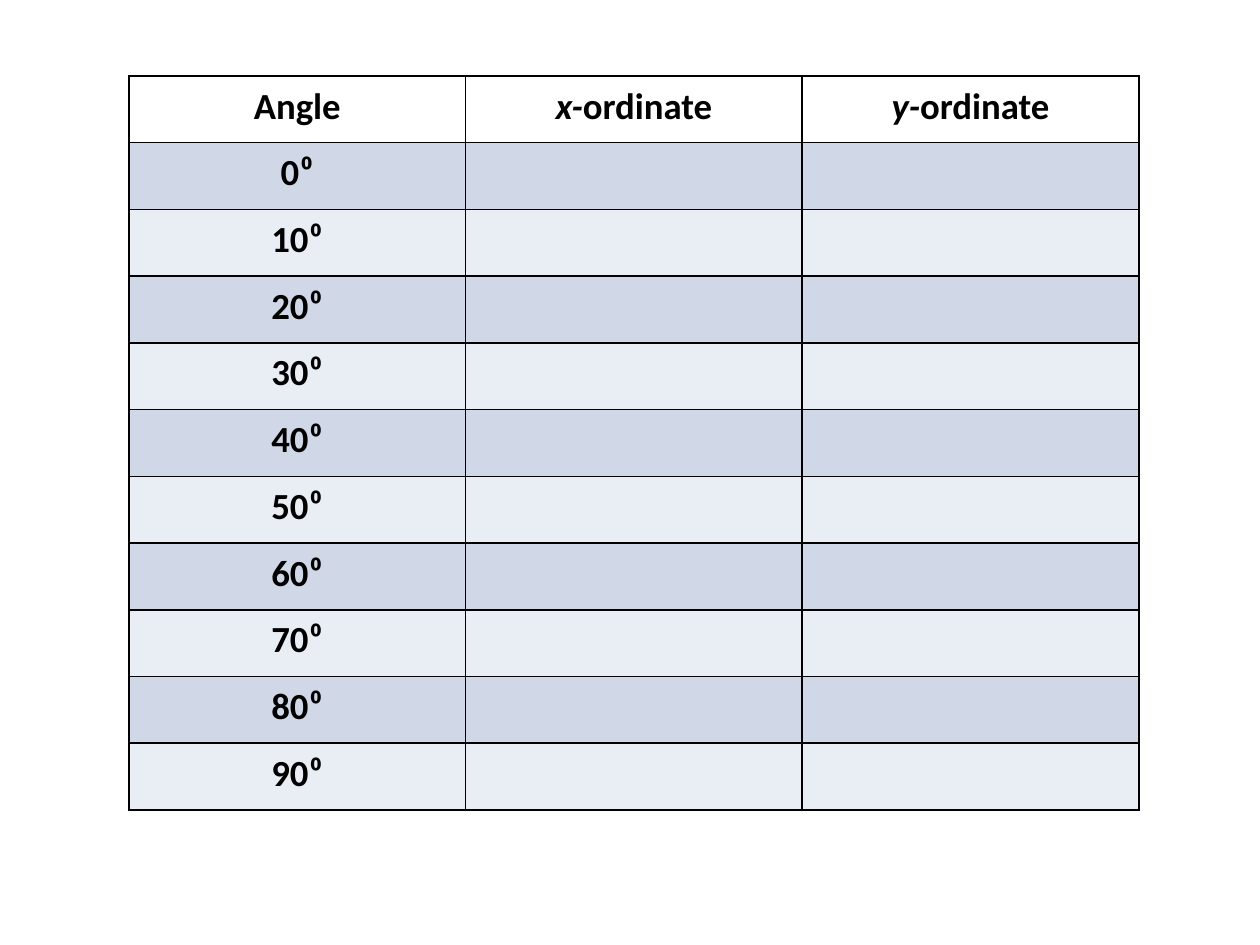
from dataclasses import dataclass

from lxml import etree
from pptx import Presentation
from pptx import util as u
from pptx.dml.color import RGBColor
from pptx.enum import text
from pptx.oxml.ns import qn

PX = u.Inches(1) // 126  # one scale: 126 px to the inch


@dataclass(frozen=True)
class Theme:
    font: str = "Calibri"
    size: int = 21
    ink: str = "000000"
    header: str = "FFFFFF"
    bands: tuple = ("D0D8E8", "E9EDF4")
    border: float = 1


THEME = Theme()

# Each cell is a list of (text, italic) runs
HEADINGS = [
    [("Angle", False)],
    [("x-", True), ("ordinate", False)],
    [("y-", True), ("ordinate", False)],
]
ANGLES = range(0, 100, 10)


def px(length):
    return u.Emu(length * PX)


def set_all(target, values):
    for name, value in values.items():
        setattr(target, name, value)


def add_borders(cell):
    properties = cell._tc.get_or_add_tcPr()
    for side in ("lnL", "lnR", "lnT", "lnB"):
        line = etree.SubElement(properties, qn(f"a:{side}"), w=str(u.Pt(THEME.border)))
        fill = etree.SubElement(line, qn("a:solidFill"))
        etree.SubElement(fill, qn("a:srgbClr"), val=THEME.ink)


def write_runs(cell, runs):
    paragraph = cell.text_frame.paragraphs[0]
    set_all(paragraph, {"alignment": text.PP_ALIGN.CENTER})
    set_all(paragraph.font, {"size": u.Pt(THEME.size)})
    for words, italic in runs:
        run = paragraph.add_run()
        run.text = words
        set_all(run.font, {"name": THEME.font, "size": u.Pt(THEME.size),
                           "bold": True, "italic": italic})
        run.font.color.rgb = RGBColor.from_string(THEME.ink)


def format_cell(cell, fill, runs):
    set_all(cell, {"margin_left": px(15), "margin_right": px(15),
                   "margin_top": px(8), "margin_bottom": px(8)})
    add_borders(cell)
    cell.fill.solid()
    cell.fill.fore_color.rgb = RGBColor.from_string(fill)
    write_runs(cell, runs)


def add_coordinate_table(slide, left, top, width, height):
    # Angle column is filled in; the coordinate columns stay empty
    content = [HEADINGS] + [[[(f"{angle}⁰", False)], [], []] for angle in ANGLES]
    table = slide.shapes.add_table(len(content), len(HEADINGS), px(left), px(top),
                                   px(width), px(height)).table
    set_all(table, {"first_row": True, "horz_banding": False})
    for row, cells in enumerate(content):
        fill = THEME.bands[(row - 1) % 2] if row else THEME.header
        for column, runs in enumerate(cells):
            format_cell(table.cell(row, column), fill, runs)


def main():
    presentation = Presentation()
    set_all(presentation, {"slide_width": px(1260), "slide_height": px(945)})
    slide = presentation.slides.add_slide(presentation.slide_layouts[6])

    # Table of angles and coordinates
    add_coordinate_table(slide, left=129, top=76, width=1010, height=734)

    presentation.save("out.pptx")


if __name__ == "__main__":
    main()
